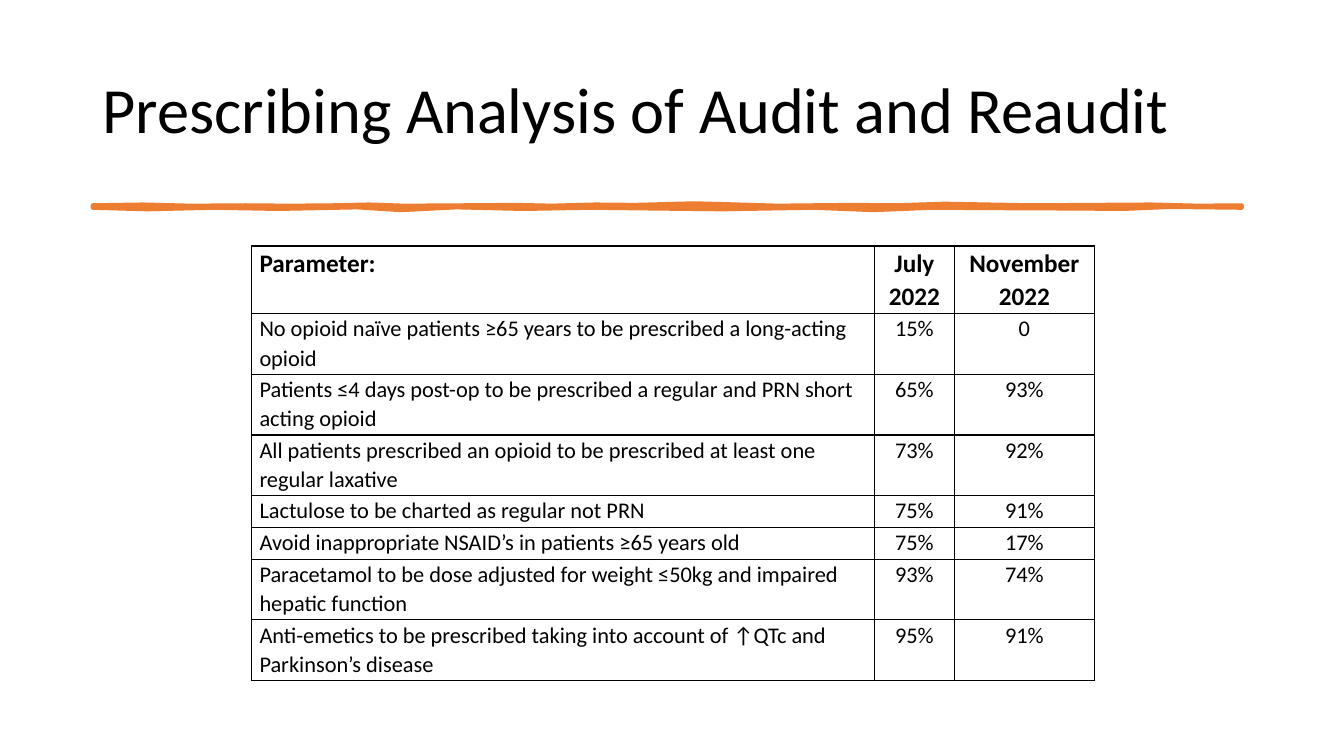
from lxml.etree import fromstring
from pptx import Presentation
from pptx.dml.color import RGBColor
from pptx.enum.text import MSO_ANCHOR, PP_ALIGN
from pptx.oxml.ns import nsdecls
from pptx.util import Cm, Pt

TITLE = "Prescribing Analysis of Audit and Reaudit"
FONT, BLACK, ORANGE = "Calibri", "000000", "ED7D31"

ROWS = [
    ("Parameter:", "July 2022", "November 2022"),
    ("No opioid naïve patients ≥65 years to be prescribed a long-acting opioid", "15%", "0"),
    ("Patients ≤4 days post-op to be prescribed a regular and PRN short acting opioid", "65%", "93%"),
    ("All patients prescribed an opioid to be prescribed at least one regular laxative", "73%", "92%"),
    ("Lactulose to be charted as regular not PRN", "75%", "91%"),
    ("Avoid inappropriate NSAID’s in patients ≥65 years old", "75%", "17%"),
    ("Paracetamol to be dose adjusted for weight ≤50kg and impaired hepatic function", "93%", "74%"),
    ("Anti-emetics to be prescribed taking into account of ↑QTc and Parkinson’s disease", "95%", "91%"),
]
COL_WIDTHS = (15.7, 2.01, 3.53)
HEADER_H, ONE_LINE_H, TWO_LINE_H = 1.7, 0.8, 1.53
CHARS_PER_LINE = 60

# Hand-drawn rule under the title: edges as (x, y) in cm
RULE_TOP = [
    (2.34, 5.18), (3.6, 5.16), (4.8, 5.19), (6.2, 5.18), (7.3, 5.19), (8.4, 5.18),
    (9.3, 5.16), (10.2, 5.19), (11.7, 5.18), (13, 5.17), (13.9, 5.19), (15, 5.16),
    (16, 5.17), (17.5, 5.13), (18.6, 5.16), (19.6, 5.19), (20.5, 5.18), (21.5, 5.17),
    (22.6, 5.18), (23.8, 5.14), (26, 5.18), (29, 5.16), (30.2, 5.19), (31.29, 5.18),
]
RULE_BOTTOM = [
    (31.29, 5.23), (29.5, 5.21), (28.3, 5.26), (27.1, 5.25), (25, 5.24), (23.5, 5.23),
    (22, 5.29), (20.5, 5.23), (18.2, 5.27), (16.5, 5.25), (14.9, 5.23), (13.2, 5.26),
    (11.5, 5.22), (10.1, 5.29), (9, 5.22), (7, 5.26), (5.4, 5.23), (3.7, 5.27), (2.34, 5.23),
]


def rgb(value):
    return RGBColor.from_string(value)


def write(tf, text, size, bold=False, align=PP_ALIGN.LEFT, spacing=1.07, after=8):
    p = tf.paragraphs[0]
    p.alignment, p.line_spacing = align, spacing
    p.space_before, p.space_after = Pt(0), Pt(after)
    r = p.add_run()
    r.text = text
    r.font.name, r.font.size, r.font.bold = FONT, Pt(size), bold
    r.font.color.rgb = rgb(BLACK)


def add_borders(cell):
    tc_pr = cell._tc.get_or_add_tcPr()
    for i, side in enumerate("LRTB"):
        tc_pr.insert(i, fromstring(
            f'<a:ln{side} {nsdecls("a")} w="{Pt(1)}"><a:solidFill>'
            f'<a:srgbClr val="{BLACK}"/></a:solidFill></a:ln{side}>'))


def add_title(s):
    sp = s.shapes.title
    sp.left, sp.top, sp.width, sp.height = Cm(2.33), Cm(1.01), Cm(29.21), Cm(3.68)
    sp.text_frame.word_wrap = True
    sp.text_frame.vertical_anchor = MSO_ANCHOR.MIDDLE
    write(sp.text_frame, TITLE, 46, spacing=0.9, after=0)


def add_rule(s):
    start, *rest = [(Cm(x), Cm(y)) for x, y in RULE_TOP + RULE_BOTTOM]
    outline = s.shapes.build_freeform(*start)
    outline.add_line_segments(rest, close=True)
    sp = outline.convert_to_shape()
    sp.shadow.inherit = False
    sp.fill.solid()
    sp.fill.fore_color.rgb = sp.line.color.rgb = rgb(ORANGE)
    sp.line.width = Pt(3.25)


def add_results(s):
    heights = [HEADER_H] + [
        TWO_LINE_H if len(row[0]) > CHARS_PER_LINE else ONE_LINE_H for row in ROWS[1:]]
    table = s.shapes.add_table(
        len(ROWS), len(COL_WIDTHS), Cm(6.34), Cm(6.2),
        Cm(sum(COL_WIDTHS)), Cm(sum(heights))).table
    table.horz_banding = False
    for col, width in zip(table.columns, COL_WIDTHS):
        col.width = Cm(width)
    for i, (row, height) in enumerate(zip(ROWS, heights)):
        table.rows[i].height = Cm(height)
        for j, text in enumerate(row):
            cell = table.cell(i, j)
            cell.margin_left = cell.margin_right = Cm(0.2)
            cell.margin_top = cell.margin_bottom = 0
            cell.fill.background()
            add_borders(cell)
            write(cell.text_frame, text, 16 if i else 18, bold=i == 0,
                  align=PP_ALIGN.CENTER if j else PP_ALIGN.LEFT)


def main():
    prs = Presentation()
    prs.slide_width, prs.slide_height = Cm(33.87), Cm(19.05)
    s = prs.slides.add_slide(prs.slide_layouts[5])
    add_title(s)
    add_rule(s)
    add_results(s)
    prs.save("out.pptx")


if __name__ == "__main__":
    main()
